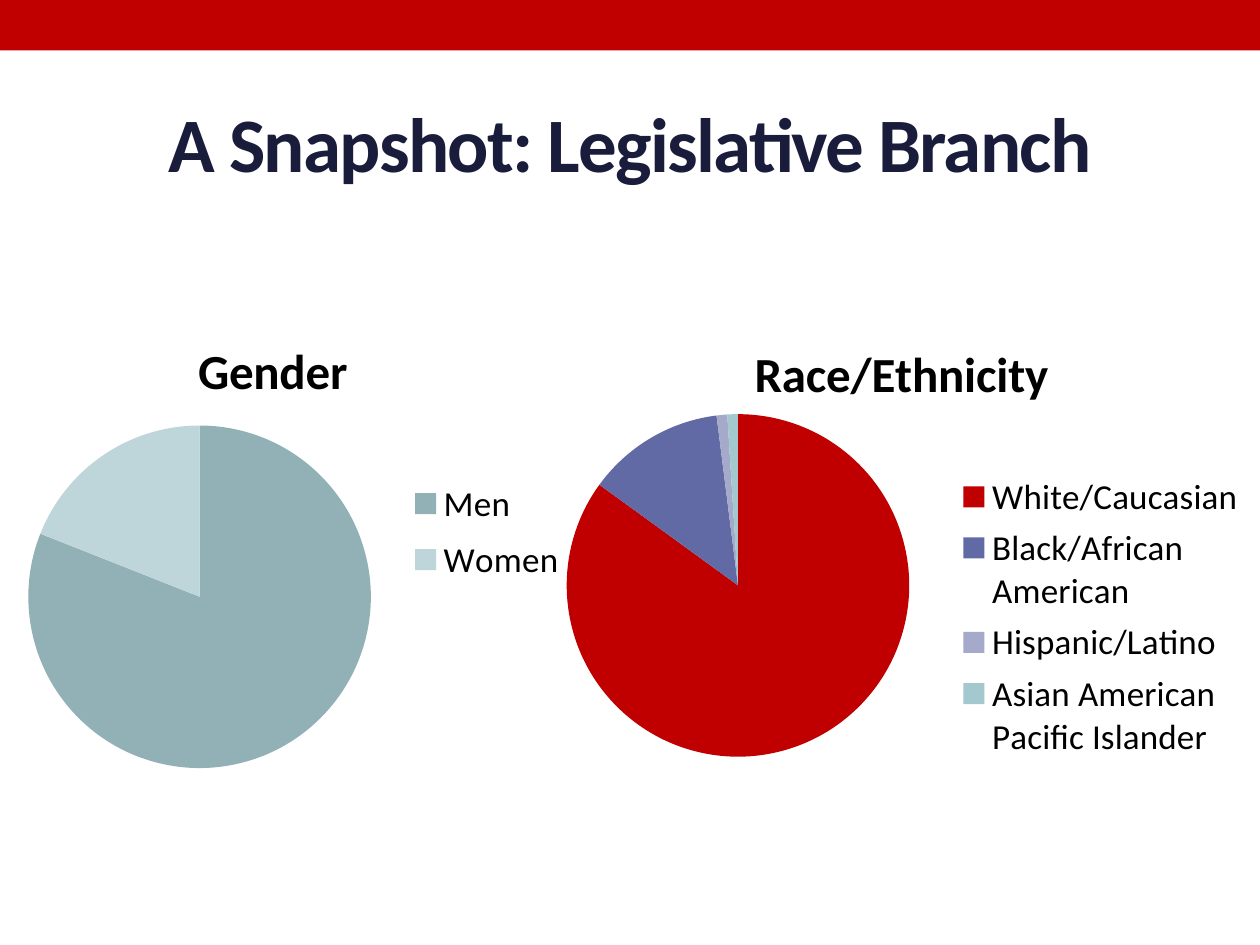
from lxml import etree
from pptx import Presentation
from pptx.chart.data import CategoryChartData
from pptx.dml.color import RGBColor
from pptx.enum.chart import XL_CHART_TYPE as ChartType, XL_LEGEND_POSITION as LegendPosition
from pptx.enum.shapes import MSO_SHAPE as Shape
from pptx.enum.text import MSO_ANCHOR as Anchor, PP_ALIGN as Align
from pptx.oxml.ns import qn
from pptx.util import Pt


def color(value):
    return RGBColor.from_string(value)


def style(font, size, value, bold=False):
    font.name = "Calibri"
    font.size = Pt(size)
    font.bold = bold
    font.color.rgb = color(value)


def add_banner(slide, box):
    banner = slide.shapes.add_shape(Shape.RECTANGLE, *map(Pt, box))
    banner.shadow.inherit = False
    banner.fill.solid()
    banner.fill.fore_color.rgb = color("C00000")
    banner.line.fill.background()


def add_heading(slide, box, wording):
    frame = slide.shapes.add_textbox(*map(Pt, box)).text_frame
    frame.word_wrap = True
    frame.vertical_anchor = Anchor.MIDDLE
    paragraph = frame.paragraphs[0]
    paragraph.alignment = Align.CENTER
    run = paragraph.add_run()
    run.text = wording
    style(run.font, 44, "191C3B", bold=True)
    run.font._element.set("spc", "-100")


def set_layout(part, index, **fractions):
    for old in part.findall(qn("c:layout")):
        part.remove(old)
    layout = etree.Element(qn("c:layout"))
    manual = etree.SubElement(layout, qn("c:manualLayout"))
    if part.tag == qn("c:plotArea"):
        etree.SubElement(manual, qn("c:layoutTarget")).set("val", "inner")
    for axis in ("x", "y"):
        etree.SubElement(manual, qn(f"c:{axis}Mode")).set("val", "edge")
    for key, fraction in fractions.items():
        etree.SubElement(manual, qn(f"c:{key}")).set("val", str(fraction))
    part.insert(index, layout)


def add_pie(slide, box, topic, shares, title_at, pie_at, legend_at):
    data = CategoryChartData()
    data.categories = [group for group, _, _ in shares]
    data.add_series(topic, [share for _, share, _ in shares])
    chart = slide.shapes.add_chart(ChartType.PIE, *map(Pt, box), data).chart
    style(chart.font, 18, "000000")

    chart.has_title = True
    run = chart.chart_title.text_frame.paragraphs[0].add_run()
    run.text = topic
    style(run.font, 28, "000000", bold=True)

    chart.has_legend = True
    chart.legend.position = LegendPosition.RIGHT
    chart.legend.include_in_layout = False
    style(chart.legend.font, 20, "000000")

    pie = chart.plots[0]
    pie.vary_by_categories = True
    for index, (_, _, fill) in enumerate(shares):
        wedge = pie.series[0].points[index].format
        wedge.fill.solid()
        wedge.fill.fore_color.rgb = color(fill)
        wedge.line.fill.background()

    root = chart.element
    set_layout(root.find(".//" + qn("c:title")), 1, **title_at)
    set_layout(root.find(".//" + qn("c:plotArea")), 0, **pie_at)
    set_layout(root.find(".//" + qn("c:legend")), 1, **legend_at)


def main():
    deck = Presentation()
    deck.slide_width, deck.slide_height = Pt(720), Pt(540)
    slide = deck.slides.add_slide(deck.slide_layouts[6])
    add_banner(slide, (0, 0, 720, 28.8))
    add_heading(slide, (36, 42, 648, 78), "A Snapshot: Legislative Branch")
    add_pie(
        slide, (-36, 174.24, 400.32, 275.76), "Gender",
        [("Men", 81, "91B1B6"), ("Women", 19, "BED6DA")],
        title_at=dict(x=0.36, y=0.05),
        pie_at=dict(x=0.13, y=0.25, w=0.49, h=0.71),
        legend_at=dict(x=0.67, y=0.34, w=0.23, h=0.26),
    )
    add_pie(
        slide, (288, 167.76, 445.68, 275.76), "Race/Ethnicity",
        [
            ("White/Caucasian", 85, "C00000"),
            ("Black/African American", 13, "626AA6"),
            ("Hispanic/Latino", 1, "A5AACB"),
            ("Asian American Pacific Islander", 1, "A3C8CD"),
        ],
        title_at=dict(x=0.31, y=0.08),
        pie_at=dict(x=0.08, y=0.25, w=0.44, h=0.71),
        legend_at=dict(x=0.58, y=0.36, w=0.37, h=0.62),
    )
    deck.save("out.pptx")


if __name__ == "__main__":
    main()
